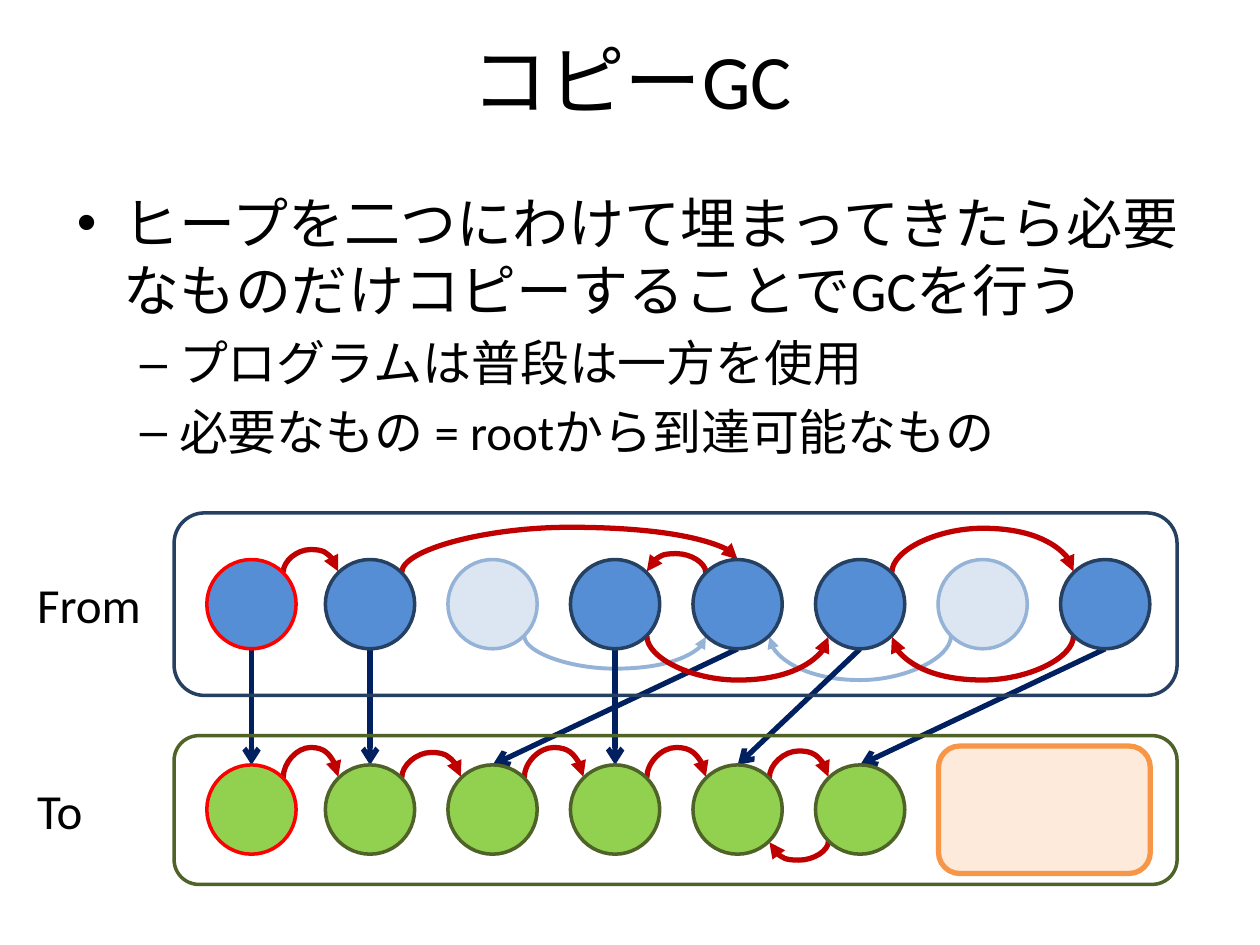
import collections

import lxml.etree
import pptx
import pptx.dml.color
import pptx.enum.shapes
import pptx.enum.text
import pptx.oxml
import pptx.oxml.ns
import pptx.util

Cm = pptx.util.Cm
RGBColor = pptx.dml.color.RGBColor
SHAPES = pptx.enum.shapes.MSO_SHAPE
CONNECTORS = pptx.enum.shapes.MSO_CONNECTOR
ALIGN = pptx.enum.text.PP_ALIGN

BLACK = RGBColor(0x00, 0x00, 0x00)
RED = RGBColor(0xFF, 0x00, 0x00)
CRIMSON = RGBColor(0xC0, 0x00, 0x00)
NAVY = RGBColor(0x00, 0x20, 0x60)
BLUE = RGBColor(0x55, 0x8E, 0xD5)
DARK_BLUE = RGBColor(0x25, 0x40, 0x61)
PALE_BLUE = RGBColor(0xDC, 0xE6, 0xF2)
SOFT_BLUE = RGBColor(0x95, 0xB3, 0xD7)
GREEN = RGBColor(0x92, 0xD0, 0x50)
DARK_GREEN = RGBColor(0x4F, 0x62, 0x28)
PEACH = RGBColor(0xFD, 0xEA, 0xDA)
ORANGE = RGBColor(0xF7, 0x96, 0x46)

Box = collections.namedtuple("Box", "left top width height")
Arc = collections.namedtuple("Arc", "source target rise onto_top", defaults=[False])

FROM_BOX = Box(3.51, 10.34, 20.22, 3.68)
TO_BOX = Box(3.51, 14.83, 20.22, 3.0)
DIAMETER = 1.8
DIAGONAL = 0.64
FROM_INSET = 0.94
TO_INSET = 0.59

GARBAGE = (2, 6)
GARBAGE_ARCS = [Arc(2, 4, -0.66), Arc(6, 4, -0.89)]
FROM_ARCS = [
    Arc(0, 1, 0.46), Arc(1, 4, 0.91, True), Arc(3, 5, -0.89),
    Arc(4, 3, 0.38), Arc(5, 7, 0.89), Arc(7, 5, -0.89),
]
TO_ARCS = [
    Arc(0, 1, 0.61), Arc(1, 2, 0.51), Arc(2, 3, 0.61),
    Arc(3, 4, 0.61), Arc(4, 5, 0.54), Arc(5, 4, -0.38),
]
COPIES = {0: 0, 1: 1, 3: 3, 4: 2, 5: 4, 7: 5}


def write_text(paragraph, text, size=28, color=BLACK, align=ALIGN.LEFT, space_before=0):
    """Fill a paragraph with one formatted run."""
    run = paragraph.add_run()
    run.text = text
    run.font.size = pptx.util.Pt(size)
    run.font.name = "Calibri"
    run.font.color.rgb = color
    paragraph.alignment = align
    paragraph.space_before = pptx.util.Pt(space_before)


def set_bullet(paragraph, character, margin, hanging):
    """Give a paragraph a bullet with a hanging indent in centimetres."""
    properties = paragraph._p.get_or_add_pPr()
    properties.set("marL", str(Cm(margin)))
    properties.set("indent", str(-Cm(hanging)))
    font = lxml.etree.SubElement(properties, pptx.oxml.ns.qn("a:buFont"))
    font.set("typeface", "Arial")
    bullet = lxml.etree.SubElement(properties, pptx.oxml.ns.qn("a:buChar"))
    bullet.set("char", character)


def add_text_frame(slide, box):
    """Add a wrapping text box and return its frame."""
    shape = slide.shapes.add_textbox(*map(Cm, box))
    shape.text_frame.word_wrap = True
    return shape.text_frame


def add_outline(slide, kind, box, line, width=2, fill=None):
    """Add a preset shape with a plain outline and optional fill."""
    shape = slide.shapes.add_shape(kind, *map(Cm, box))
    shape.shadow.inherit = False
    if fill is None:
        shape.fill.background()
    else:
        shape.fill.solid()
        shape.fill.fore_color.rgb = fill
    shape.line.color.rgb = line
    shape.line.width = pptx.util.Pt(width)


def add_arrow(slide, kind, begin, end, color, width, head):
    """Add a connector with an arrowhead at its end."""
    connector = slide.shapes.add_connector(kind, *map(Cm, begin + end))
    connector.line.color.rgb = color
    connector.line.width = pptx.util.Pt(width)
    line = connector.line._get_or_add_ln()
    lxml.etree.SubElement(line, pptx.oxml.ns.qn("a:tailEnd")).set("type", head)
    properties = connector._element.spPr
    lxml.etree.SubElement(properties, pptx.oxml.ns.qn("a:effectLst"))
    return connector


def node_center(box, inset, index):
    """Return the centre of a numbered node inside a heap box."""
    left = 0.66 if index == 0 else 3.05 + 2.47 * (index - 1)
    return box.left + left + DIAMETER / 2, box.top + inset + DIAMETER / 2


def add_arcs(slide, box, inset, arcs, color=CRIMSON, width=3):
    """Draw references as U-shaped connectors turned by a quarter."""
    for arc in arcs:
        side = 1 if arc.target > arc.source else -1
        upward = 1 if arc.rise > 0 else -1
        source_x, center_y = node_center(box, inset, arc.source)
        target_x, _ = node_center(box, inset, arc.target)
        start_x = source_x + side * DIAGONAL
        start_y = center_y - upward * DIAGONAL
        end_x = target_x if arc.onto_top else target_x - side * DIAGONAL
        drop = DIAMETER / 2 - DIAGONAL if arc.onto_top else 0.02
        end_y = start_y - upward * drop
        middle_x, middle_y = (start_x + end_x) / 2, (start_y + end_y) / 2
        begin, end = (
            (middle_x + y - middle_y, middle_y - x + middle_x)
            for x, y in ((start_x, start_y), (end_x, end_y))
        )
        connector = add_arrow(slide, CONNECTORS.CURVE, begin, end, color, width, "triangle")
        properties = connector._element.spPr
        properties.find(pptx.oxml.ns.qn("a:xfrm")).set("rot", "5400000")
        geometry = properties.find(pptx.oxml.ns.qn("a:prstGeom"))
        guides = geometry.find(pptx.oxml.ns.qn("a:avLst"))
        guide = lxml.etree.SubElement(guides, pptx.oxml.ns.qn("a:gd"))
        guide.set("name", "adj1")
        guide.set("fmla", f"val {round(abs(arc.rise) / drop * 100000)}")


def add_nodes(slide, box, inset, count, fill, line, garbage=()):
    """Draw a row of objects, with the root outlined in red."""
    for index in range(count):
        x, y = node_center(box, inset, index)
        node_box = Box(x - DIAMETER / 2, y - DIAMETER / 2, DIAMETER, DIAMETER)
        node_fill = PALE_BLUE if index in garbage else fill
        node_line = RED if index == 0 else SOFT_BLUE if index in garbage else line
        add_outline(slide, SHAPES.OVAL, node_box, node_line, fill=node_fill)


def add_copies(slide, from_box, to_box):
    """Join each live object to its copy."""
    for source, target in COPIES.items():
        x, y = node_center(from_box, FROM_INSET, source)
        copy_x, copy_y = node_center(to_box, TO_INSET, target)
        begin, end = (x, y + DIAMETER / 2), (copy_x, copy_y - DIAMETER / 2)
        add_arrow(slide, CONNECTORS.STRAIGHT, begin, end, NAVY, 3, "arrow")


def add_label(slide, box, text):
    """Name a heap to the left of its box."""
    frame = add_text_frame(slide, Box(box.left - 3.01, box.top + box.height / 2 - 0.73, 2.97, 1.45))
    write_text(frame.paragraphs[0], text)


def add_from_space(slide, box):
    """Draw the heap that is being collected."""
    add_outline(slide, SHAPES.ROUNDED_RECTANGLE, box, DARK_BLUE)
    add_arcs(slide, box, FROM_INSET, FROM_ARCS)
    add_nodes(slide, box, FROM_INSET, 8, BLUE, DARK_BLUE, GARBAGE)
    add_label(slide, box, "From")


def add_to_space(slide, box):
    """Draw the heap that receives the copies and its free area."""
    add_outline(slide, SHAPES.ROUNDED_RECTANGLE, box, DARK_GREEN)
    add_arcs(slide, box, TO_INSET, TO_ARCS)
    add_nodes(slide, box, TO_INSET, 6, GREEN, DARK_GREEN)
    free_box = Box(box.left + 15.41, box.top + 0.21, 4.27, 2.57)
    add_outline(slide, SHAPES.ROUNDED_RECTANGLE, free_box, ORANGE, 3, PEACH)
    add_label(slide, box, "To")


def add_title(slide, box):
    """Place and format the title."""
    title = slide.shapes.title
    title.left, title.top, title.width, title.height = map(Cm, box)
    title.text_frame.vertical_anchor = pptx.enum.text.MSO_ANCHOR.MIDDLE
    write_text(title.text_frame.paragraphs[0], "コピーGC", size=44, align=ALIGN.CENTER)


def add_explanation(slide, box):
    """Write the bulleted explanation."""
    frame = add_text_frame(slide, box)
    first = frame.paragraphs[0]
    text = "ヒープを二つにわけて埋まってきたら必要なものだけコピーすることでGCを行う"
    write_text(first, text, size=32, space_before=6.4)
    set_bullet(first, "•", 0.95, 0.95)
    for text in ("プログラムは普段は一方を使用", "必要なもの = rootから到達可能なもの"):
        paragraph = frame.add_paragraph()
        write_text(paragraph, text, space_before=5.6)
        set_bullet(paragraph, "–", 2.06, 0.79)


def main():
    """Build the slide and save it."""
    presentation = pptx.Presentation()
    presentation.slide_width, presentation.slide_height = Cm(25.4), Cm(19.05)
    slide = presentation.slides.add_slide(presentation.slide_layouts[5])
    add_title(slide, Box(1.3, 0, 22.86, 3.18))
    add_explanation(slide, Box(1.3, 3.68, 22.86, 6.2))
    add_arcs(slide, FROM_BOX, FROM_INSET, GARBAGE_ARCS, SOFT_BLUE, 2.25)
    add_copies(slide, FROM_BOX, TO_BOX)
    add_to_space(slide, TO_BOX)
    add_from_space(slide, FROM_BOX)
    presentation.save("out.pptx")


if __name__ == "__main__":
    main()
